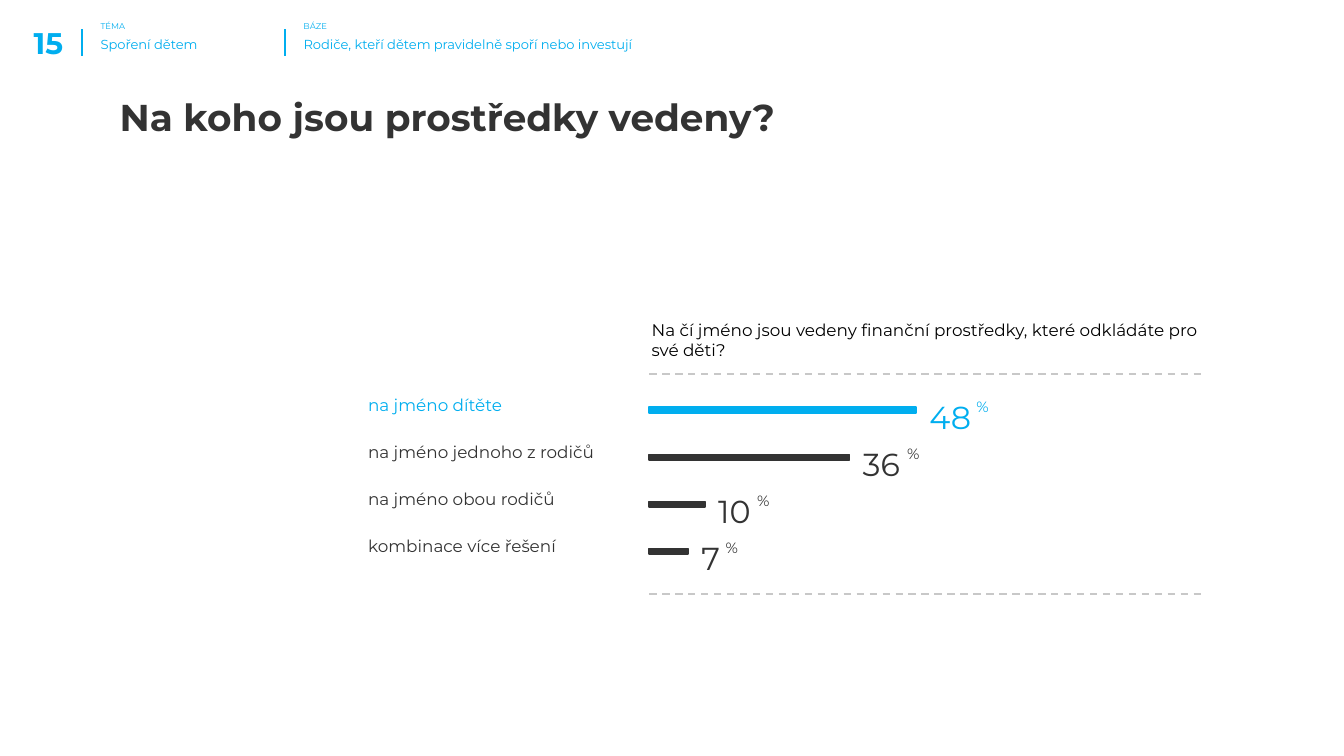
from lxml.etree import SubElement
from pptx import Presentation
from pptx.dml.color import RGBColor
from pptx.enum.dml import MSO_LINE
from pptx.enum.shapes import MSO_CONNECTOR, MSO_SHAPE
from pptx.enum.text import MSO_ANCHOR, PP_ALIGN
from pptx.oxml.ns import qn
from pptx.util import Pt

BLUE = RGBColor(0x00, 0xAE, 0xEF)
DARK = RGBColor(0x33, 0x33, 0x33)
BLACK = RGBColor(0x00, 0x00, 0x00)
GREY = RGBColor(0xC8, 0xC8, 0xC8)
FONT = "Montserrat"

PAGE_NUMBER = "15"
TITLE = "Na koho jsou prostředky vedeny?"
QUESTION = "Na čí jméno jsou vedeny finanční prostředky, které odkládáte pro své děti?"
HEADER = [
    ("TÉMA", "Spoření dětem", 43.9),
    ("BÁZE", "Rodiče, kteří dětem pravidelně spoří nebo investují", 152.6),
]
ANSWERS = [
    ("na jméno dítěte", 48, BLUE, 25.2),
    ("na jméno jednoho z rodičů", 36, DARK, 23.8),
    ("na jméno obou rodičů", 10, DARK, 21),
    ("kombinace více řešení", 7, DARK, 13),
]

HEADER_TEXT_OFFSET = 2.9
BAR_LEFT = 347.8
BAR_HEIGHT = 2.9
POINTS_PER_PERCENT = 2.98
FIRST_BAR_TOP = 218.3
ROW_PITCH = 25.2
RULE_RIGHT = 645.8
RULE_TOPS = (200.2, 318.2)

deck = Presentation()
deck.slide_width, deck.slide_height = Pt(720), Pt(405)
slide = deck.slides.add_slide(deck.slide_layouts[6])


def add_text(text, left, top, width, height, *, size, color, bold=False,
             align=PP_ALIGN.LEFT, anchor=MSO_ANCHOR.TOP, spacing=None,
             right_inset=7.2, bottom_inset=7.2):
    box = slide.shapes.add_textbox(Pt(left), Pt(top), Pt(width), Pt(height))
    frame = box.text_frame
    frame.word_wrap = True
    frame.vertical_anchor = anchor
    frame.margin_left = frame.margin_top = Pt(7.2)
    frame.margin_right, frame.margin_bottom = Pt(right_inset), Pt(bottom_inset)
    paragraph = frame.paragraphs[0]
    paragraph.alignment = align
    paragraph.line_spacing = spacing
    run = paragraph.add_run()
    run.text = text
    run.font.name, run.font.size, run.font.bold = FONT, Pt(size), bold
    run.font.color.rgb = color


def add_line(x1, y1, x2, y2, color, width, dash=None):
    line = slide.shapes.add_connector(
        MSO_CONNECTOR.STRAIGHT, Pt(x1), Pt(y1), Pt(x2), Pt(y2))
    line.line.color.rgb = color
    line.line.width = Pt(width)
    if dash is not None:
        line.line.dash_style = dash
    SubElement(line._element.spPr, qn("a:effectLst"))


def add_bar(top, width, color):
    bar = slide.shapes.add_shape(
        MSO_SHAPE.RECTANGLE, Pt(BAR_LEFT), Pt(top), Pt(width), Pt(BAR_HEIGHT))
    bar.shadow.inherit = False
    bar.fill.solid()
    bar.fill.fore_color.rgb = color
    bar.line.color.rgb = color
    bar.line.width = Pt(1)


add_text(PAGE_NUMBER, 0, 0, 33.8, 32.4, size=16, color=BLUE, bold=True,
         align=PP_ALIGN.RIGHT, anchor=MSO_ANCHOR.BOTTOM, right_inset=0, bottom_inset=0)
for caption, value, rule_left in HEADER:
    text_left = rule_left + HEADER_TEXT_OFFSET
    add_line(rule_left, 15.8, rule_left, 29.8, BLUE, 0.75)
    add_text(caption, text_left, 8.6, 45.4, 30.2, size=4.5, color=BLUE)
    add_text(value, text_left, 15.1, 313.2, 20.9, size=7, color=BLUE)

add_text(TITLE, 57, 46.1, 515.5, 36, size=20, color=DARK, bold=True, spacing=0.9)
add_text(QUESTION, 342, 164.2, 313.2, 25.2, size=9, color=BLACK)

for rule_top in RULE_TOPS:
    add_line(BAR_LEFT, rule_top, RULE_RIGHT, rule_top, GREY, 1, MSO_LINE.DASH)

for row, (answer, percent, color, sign_offset) in enumerate(ANSWERS):
    bar_top = FIRST_BAR_TOP + row * ROW_PITCH
    bar_width = percent * POINTS_PER_PERCENT
    bar_right = BAR_LEFT + bar_width
    add_text(answer, 190.1, bar_top - 12.5, 154, 25.2, size=9, color=color)
    add_bar(bar_top, bar_width, color)
    add_text(str(percent), bar_right, bar_top - 12.3, 49, 27.4, size=17, color=color)
    add_text("%", bar_right + sign_offset, bar_top - 10.1, 33.1, 20.9, size=8, color=color)

deck.save("out.pptx")
